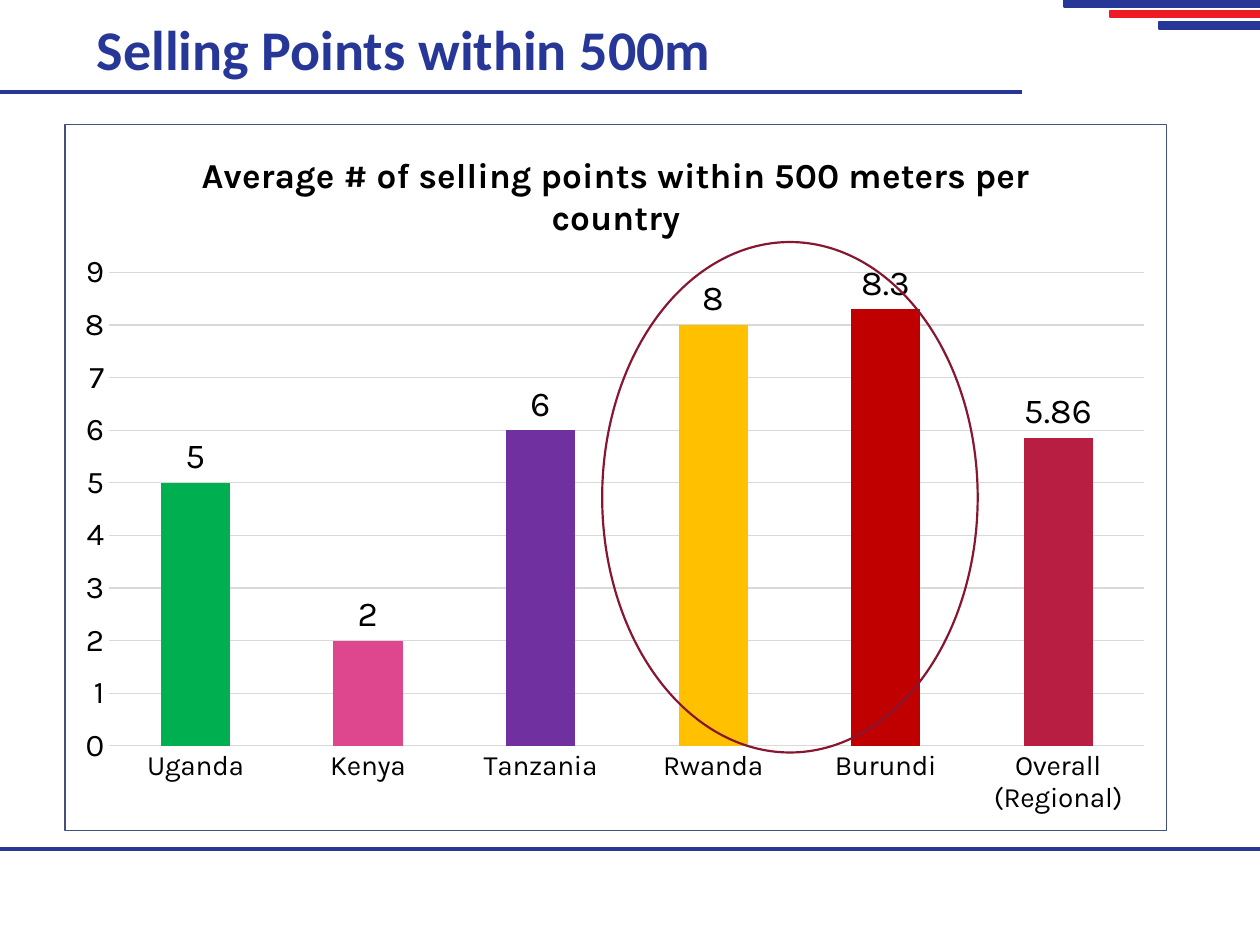
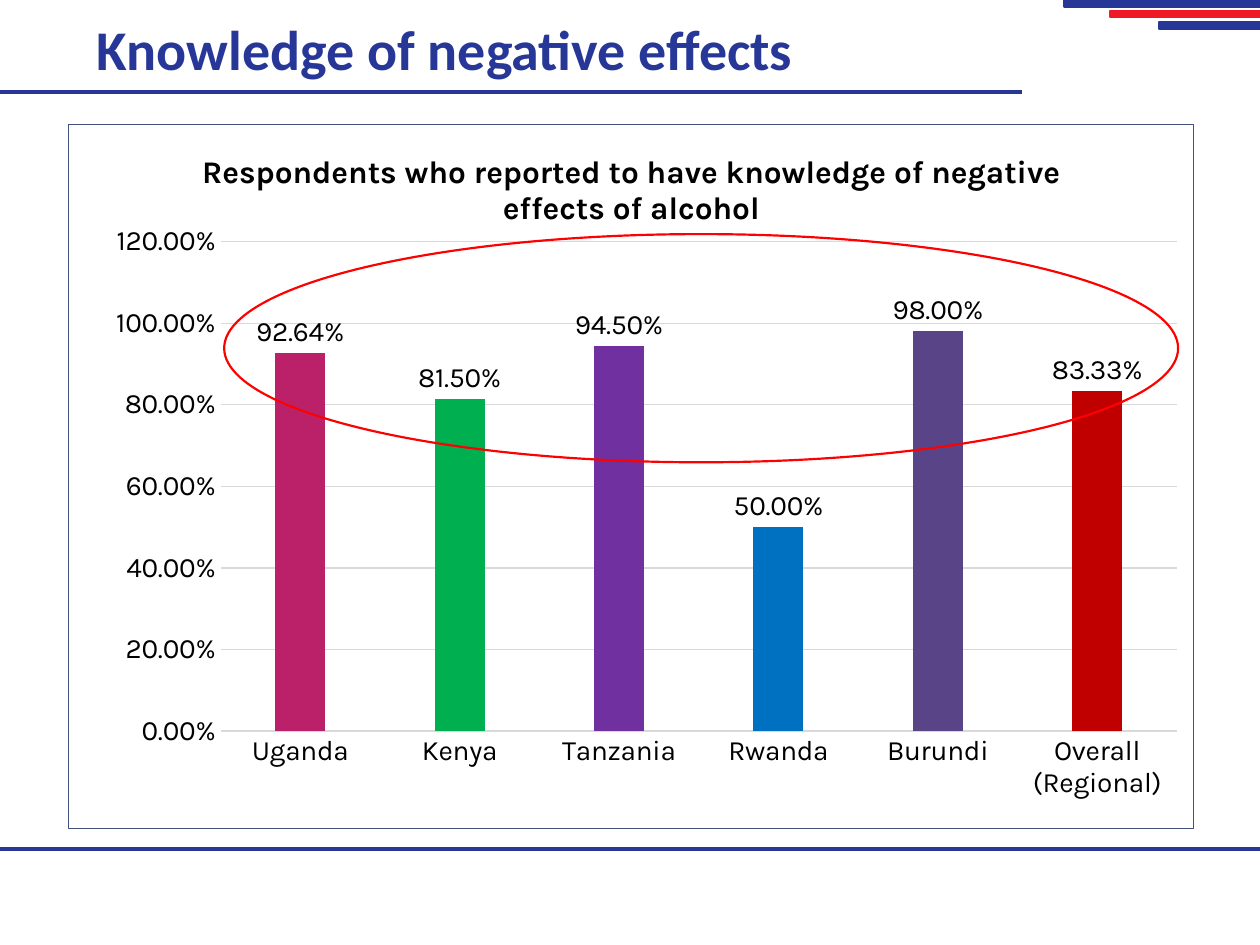
import pptx
import pptx.chart.data
import pptx.dml.color
import pptx.enum.chart
import pptx.enum.shapes
import pptx.enum.text
import pptx.oxml
import pptx.oxml.ns
import pptx.util

Cm = pptx.util.Cm
Pt = pptx.util.Pt
RGBColor = pptx.dml.color.RGBColor

NAVY = RGBColor(0x27, 0x37, 0x97)
FOOTER_NAVY = RGBColor(0x28, 0x38, 0x97)
BAND_RED = RGBColor(0xEE, 0x1A, 0x26)
BLACK = RGBColor(0, 0, 0)
GRID_GREY = RGBColor(0xD9, 0xD9, 0xD9)
GREEN = RGBColor(0x00, 0xB0, 0x50)
PINK = RGBColor(0xDE, 0x47, 0x8E)
PURPLE = RGBColor(0x70, 0x30, 0xA0)
AMBER = RGBColor(0xFF, 0xC0, 0x00)
DARK_RED = RGBColor(0xC0, 0x00, 0x00)
CRIMSON = RGBColor(0xB7, 0x1E, 0x42)
MAGENTA = RGBColor(0xBA, 0x21, 0x69)
BLUE = RGBColor(0x00, 0x70, 0xC0)
VIOLET = RGBColor(0x59, 0x44, 0x87)
WINE = RGBColor(0x87, 0x16, 0x31)
RED = RGBColor(0xFF, 0x00, 0x00)

HEADING_FONT = "Calibri"
CHART_FONT = "Karla"
SLIDE_W, SLIDE_H = 25.4, 19.05
TITLE_BOX = (1.7, 0.28, 20.68, 1.57)
COUNTRIES = ["Uganda", "Kenya", "Tanzania", "Rwanda", "Burundi", "Overall (Regional)"]


def style_font(font, size, name=CHART_FONT, color=BLACK, bold=False):
    font.size, font.name, font.bold = Pt(size), name, bold
    font.color.rgb = color


def write_text(frame, text, line_spacing=None, **font_format):
    paragraph = frame.paragraphs[0]
    paragraph.line_spacing = line_spacing
    run = paragraph.add_run()
    run.text = text
    style_font(run.font, **font_format)


def add_rule(slide, y, end_x, color, width):
    rule = slide.shapes.add_connector(
        pptx.enum.shapes.MSO_CONNECTOR.STRAIGHT, Cm(-0.08), Cm(y), Cm(end_x), Cm(y))
    rule.line.color.rgb = color
    rule.line.width = Pt(width)
    properties = rule._element.spPr
    properties.append(properties.makeelement(pptx.oxml.ns.qn("a:effectLst"), {}))


def add_outlined(slide, preset, box, line_color, fill=None):
    shape = slide.shapes.add_shape(preset, *map(Cm, box))
    shape.shadow.inherit = False
    if fill is None:
        shape.fill.background()
    else:
        shape.fill.solid()
        shape.fill.fore_color.rgb = fill
    shape.line.color.rgb = line_color
    shape.line.width = Pt(1.25)


def add_frame(slide, title):
    """Title, rules and corner bands found on every slide."""
    add_rule(slide, 1.85, 20.6, NAVY, 2.5)
    # Corner bands run to the right edge of the slide
    for top, width, height, color in [(0, 3.94, 0.15, NAVY),
                                      (0.22, 3.02, 0.13, BAND_RED),
                                      (0.45, 2.03, 0.13, NAVY)]:
        add_outlined(slide, pptx.enum.shapes.MSO_SHAPE.RECTANGLE,
                     (SLIDE_W - width, top, width, height), color, fill=color)
    add_rule(slide, 17.12, SLIDE_W, FOOTER_NAVY, 2.25)
    # Title
    heading = slide.shapes.add_textbox(*map(Cm, TITLE_BOX)).text_frame
    heading.word_wrap = True
    heading.vertical_anchor = pptx.enum.text.MSO_ANCHOR.MIDDLE
    write_text(heading, title, line_spacing=0.9, size=32, name=HEADING_FONT,
               color=NAVY, bold=True)


def set_chart_area(chart, plot):
    """White bordered chart area, and the inner plot as fractions of it."""
    space = chart._chartSpace
    area = pptx.oxml.parse_xml(
        f'<c:spPr {pptx.oxml.ns.nsdecls("c", "a")}>'
        '<a:solidFill><a:srgbClr val="FFFFFF"/></a:solidFill>'
        '<a:ln w="9525"><a:solidFill><a:srgbClr val="42527C"/></a:solidFill></a:ln>'
        '</c:spPr>')
    space.find(pptx.oxml.ns.qn("c:chart")).addnext(area)

    plot_area = space.chart.plotArea
    for old_layout in plot_area.findall(pptx.oxml.ns.qn("c:layout")):
        plot_area.remove(old_layout)
    sizes = "".join(f'<c:{key} val="{value}"/>' for key, value in zip("xywh", plot))
    plot_area.insert(0, pptx.oxml.parse_xml(
        f'<c:layout {pptx.oxml.ns.nsdecls("c")}><c:manualLayout>'
        '<c:layoutTarget val="inner"/><c:xMode val="edge"/><c:yMode val="edge"/>'
        f'{sizes}</c:manualLayout></c:layout>'))


def add_country_chart(slide, box, title, values, colors, title_size, value_size,
                      label_size, top, step, plot, gap, overlap=0,
                      number_format="General", base_line=False):
    data = pptx.chart.data.CategoryChartData(number_format=number_format)
    data.categories = COUNTRIES
    data.add_series("Series 1", values)
    chart = slide.shapes.add_chart(
        pptx.enum.chart.XL_CHART_TYPE.COLUMN_CLUSTERED, *map(Cm, box), data).chart
    style_font(chart.font, 10, name=HEADING_FONT)
    set_chart_area(chart, plot)
    chart.has_legend = False
    write_text(chart.chart_title.text_frame, title, size=title_size, bold=True)
    chart.chart_title.include_in_layout = False

    # Axes
    countries, scale = chart.category_axis, chart.value_axis
    for axis, size in [(countries, 16), (scale, value_size)]:
        axis.major_tick_mark = pptx.enum.chart.XL_TICK_MARK.NONE
        axis.format.line.fill.background()
        style_font(axis.tick_labels.font, size)
    scale.minimum_scale, scale.maximum_scale, scale.major_unit = 0, top, step
    scale.tick_labels.number_format = number_format
    scale.tick_labels.number_format_is_linked = False
    grid_lines = [scale.major_gridlines.format.line]
    if base_line:
        grid_lines.append(countries.format.line)
    for line in grid_lines:
        line.color.rgb = GRID_GREY
        line.width = Pt(0.75)

    # Columns, one colour per country
    columns = chart.plots[0]
    columns.vary_by_categories = False
    columns.gap_width, columns.overlap = gap, overlap
    series = columns.series[0]
    series.format.fill.solid()
    series.format.fill.fore_color.rgb = CRIMSON
    for index, color in enumerate(colors):
        fill = series.points[index].format.fill
        fill.solid()
        fill.fore_color.rgb = color

    # Value labels
    labels = series.data_labels
    labels.show_value = True
    labels.position = pptx.enum.chart.XL_LABEL_POSITION.OUTSIDE_END
    labels.number_format = number_format
    labels.number_format_is_linked = False
    style_font(labels.font, label_size)


def add_chart_slide(deck, heading, box, highlight, highlight_color, **chart_format):
    """The highlight is an ellipse placed from the chart's top left corner."""
    slide = deck.slides.add_slide(deck.slide_layouts[6])
    add_frame(slide, heading)
    add_country_chart(slide, box, **chart_format)
    dx, dy, width, height = highlight
    add_outlined(slide, pptx.enum.shapes.MSO_SHAPE.OVAL,
                 (box[0] + dx, box[1] + dy, width, height), highlight_color)


def main():
    deck = pptx.Presentation()
    deck.slide_width, deck.slide_height = Cm(SLIDE_W), Cm(SLIDE_H)

    add_chart_slide(
        deck, "Selling Points within 500m",
        box=(1.3, 2.49, 22.23, 14.27),
        highlight=(10.84, 2.39, 7.57, 10.29), highlight_color=WINE,
        title="Average # of selling points within 500 meters per country",
        values=[5, 2, 6, 8, 8.3, 5.86],
        colors=[GREEN, PINK, PURPLE, AMBER, DARK_RED, CRIMSON],
        title_size=20, value_size=18, label_size=20, top=9, step=1,
        plot=(0.04, 0.21, 0.94, 0.67), gap=150)

    add_chart_slide(
        deck, "Knowledge of negative effects",
        box=(1.37, 2.49, 22.71, 14.22),
        highlight=(3.15, 2.23, 19.23, 4.6), highlight_color=RED,
        title="Respondents who reported to have knowledge of negative effects of alcohol",
        values=[0.9264, 0.815, 0.945, 0.5, 0.98, 0.8333],
        colors=[MAGENTA, GREEN, PURPLE, BLUE, VIOLET, DARK_RED],
        title_size=18, value_size=16, label_size=16, top=1.2, step=0.2,
        plot=(0.135, 0.167, 0.85, 0.695), gap=219, overlap=-27,
        number_format="0.00%", base_line=True)

    deck.save("out.pptx")


if __name__ == "__main__":
    main()
